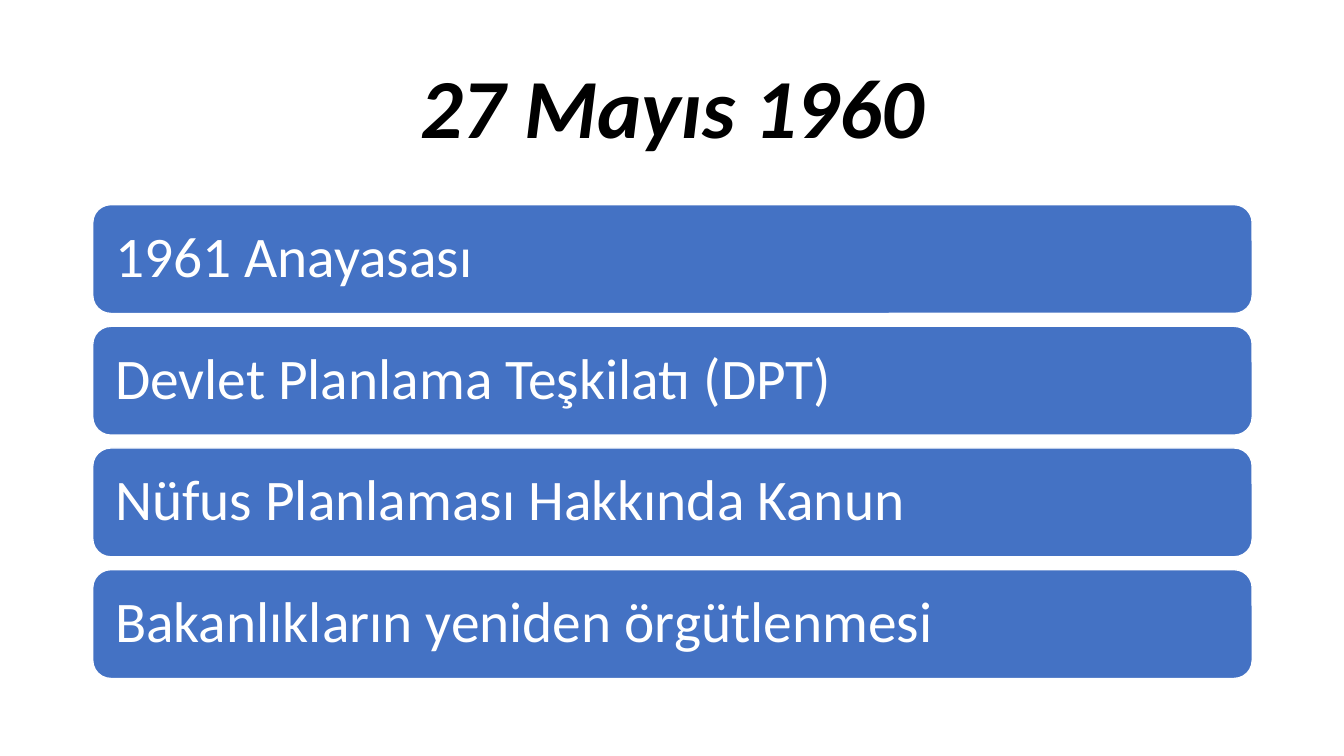
from pptx import Presentation
from pptx.dml.color import RGBColor
from pptx.enum import shapes, text
from pptx.util import Inches, Pt


def color(value):
    return RGBColor.from_string(value)


def write(box, wording, align, inset, font):
    frame = box.text_frame
    margins = dict.fromkeys(
        ("margin_left", "margin_right", "margin_top", "margin_bottom"), Inches(inset))
    settings = {"word_wrap": True, "vertical_anchor": text.MSO_ANCHOR.MIDDLE, **margins}
    for name, value in settings.items():
        setattr(frame, name, value)
    para = frame.paragraphs[0]
    para.alignment = align
    para.line_spacing = 0.9
    span = para.add_run()
    span.text = wording
    span.font.color.rgb = color(font["color"])
    for name, value in font["format"].items():
        setattr(span.font, name, value)


deck = Presentation()
deck.slide_width = Inches(13.33)
deck.slide_height = Inches(7.5)
page = deck.slides.add_slide(deck.slide_layouts[6])

LEFT, WIDTH = Inches(0.92), Inches(11.5)

# Title
title_font = {"color": "000000",
              "format": {"name": "Calibri", "size": Pt(60), "bold": True, "italic": True}}
title = page.shapes.add_textbox(LEFT, Inches(0.38), WIDTH, Inches(1.45))
write(title, "27 Mayıs 1960", text.PP_ALIGN.CENTER, 0.1, title_font)

# Stacked bars, one per reform
reforms = [
    "1961 Anayasası",
    "Devlet Planlama Teşkilatı (DPT)",
    "Nüfus Planlaması Hakkında Kanun",
    "Bakanlıkların yeniden örgütlenmesi",
]
bar_font = {"color": "FFFFFF", "format": {"name": "Calibri", "size": Pt(41)}}
FIRST_TOP, STEP, BAR_HEIGHT = 2.03, 1.207, 1.08
for index, reform in enumerate(reforms):
    bar = page.shapes.add_shape(
        shapes.MSO_SHAPE.ROUNDED_RECTANGLE,
        LEFT, Inches(FIRST_TOP + index * STEP), WIDTH, Inches(BAR_HEIGHT))
    bar.shadow.inherit = False
    bar.fill.solid()
    bar.fill.fore_color.rgb = color("4472C4")
    bar.line.color.rgb = color("FFFFFF")
    bar.line.width = Pt(1)
    write(bar, reform, text.PP_ALIGN.LEFT, 0.17, bar_font)

deck.save("out.pptx")
